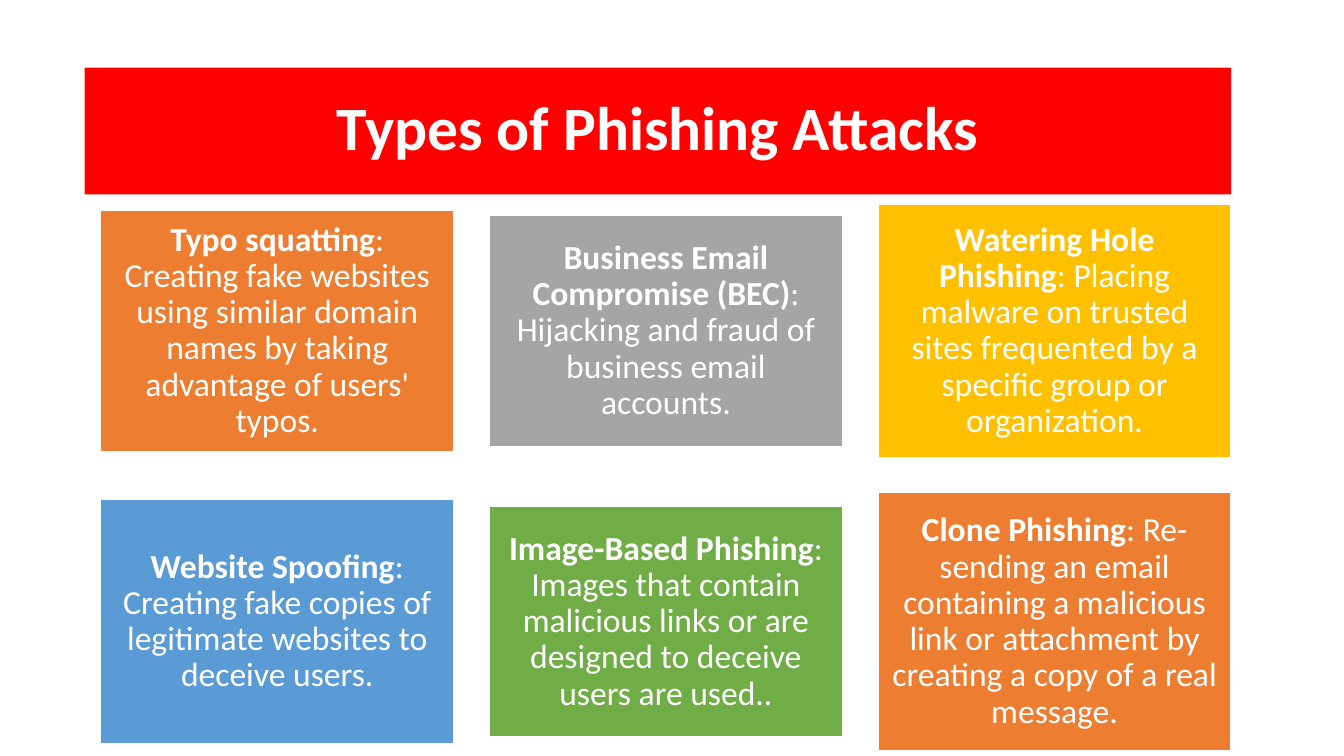
from pptx import Presentation
from pptx.dml.color import RGBColor
from pptx.enum.shapes import MSO_SHAPE as Shape
from pptx.enum.text import MSO_ANCHOR as Anchor, PP_ALIGN as Align
from pptx.util import Inches, Pt

COLORS = {
    "white": "FFFFFF", "red": "FF0000", "orange": "ED7D31", "gray": "A5A5A5",
    "gold": "FFC000", "blue": "5B9BD5", "green": "70AD47",
}
BANNER_BOX = (0.84, 0.67, 11.37, 1.26)
GRID_BOX = (1, 1.84, 11.21, 5.77)
COLUMNS, ROWS = 3, 2
CARD_WIDTH = 3.5
ATTACKS = [
    ("Typo squatting",
     ": Creating fake websites using similar domain names by taking advantage of users' typos.",
     "orange", 2.4),
    ("Business Email Compromise (BEC)",
     ": Hijacking and fraud of business email accounts.",
     "gray", 2.3),
    ("Watering Hole Phishing",
     ": Placing malware on trusted sites frequented by a specific group or organization.",
     "gold", 2.52),
    ("Website Spoofing",
     ": Creating fake copies of legitimate websites to deceive users.",
     "blue", 2.43),
    ("Image-Based Phishing",
     ": Images that contain malicious links or are designed to deceive users are used..",
     "green", 2.28),
    ("Clone Phishing",
     ": Re-sending an email containing a malicious link or attachment by creating a copy of a real message.",
     "orange", 2.56),
]


def color(name):
    return RGBColor.from_string(COLORS[name])


def apply(target, settings):
    for name, value in settings.items():
        setattr(target, name, value)


def add_panel(slide, box, fill, size, runs, margin):
    panel = slide.shapes.add_shape(Shape.RECTANGLE, *map(Inches, box))
    panel.shadow.inherit = False
    panel.fill.solid()
    panel.fill.fore_color.rgb = color(fill)
    panel.line.fill.background()
    margins = {f"margin_{side}": Inches(margin) for side in ("left", "right", "top", "bottom")}
    apply(panel.text_frame, {"word_wrap": True, "vertical_anchor": Anchor.MIDDLE, **margins})
    paragraph = panel.text_frame.paragraphs[0]
    apply(paragraph, {"alignment": Align.CENTER, "line_spacing": 0.9})
    for words, bold in runs:
        run = paragraph.add_run()
        run.text = words
        apply(run.font, {"name": "Calibri", "size": Pt(size), "bold": bold})
        run.font.color.rgb = color("white")
    return panel


def add_banner(slide, box):
    add_panel(slide, box, "red", 44, [("Types of Phishing Attacks", True)], 0.1)


def add_attack_grid(slide, box):
    left, top, width, height = box
    column_step = (width - CARD_WIDTH) / (COLUMNS - 1)
    row_height = height / ROWS
    for index, (attack, description, fill, card_height) in enumerate(ATTACKS):
        row, column = divmod(index, COLUMNS)
        card_left = left + column * column_step
        card_top = top + (row + 0.5) * row_height - card_height / 2
        card = add_panel(slide, (card_left, card_top, CARD_WIDTH, card_height),
                         fill, 24, [(attack, True), (description, False)], 0.1)
        card.line.color.rgb = color("white")
        card.line.width = Pt(1)


def main():
    deck = Presentation()
    apply(deck, {"slide_width": Inches(13.33), "slide_height": Inches(7.5)})
    slide = deck.slides.add_slide(deck.slide_layouts[6])
    add_banner(slide, BANNER_BOX)
    add_attack_grid(slide, GRID_BOX)
    deck.save("out.pptx")


if __name__ == "__main__":
    main()
